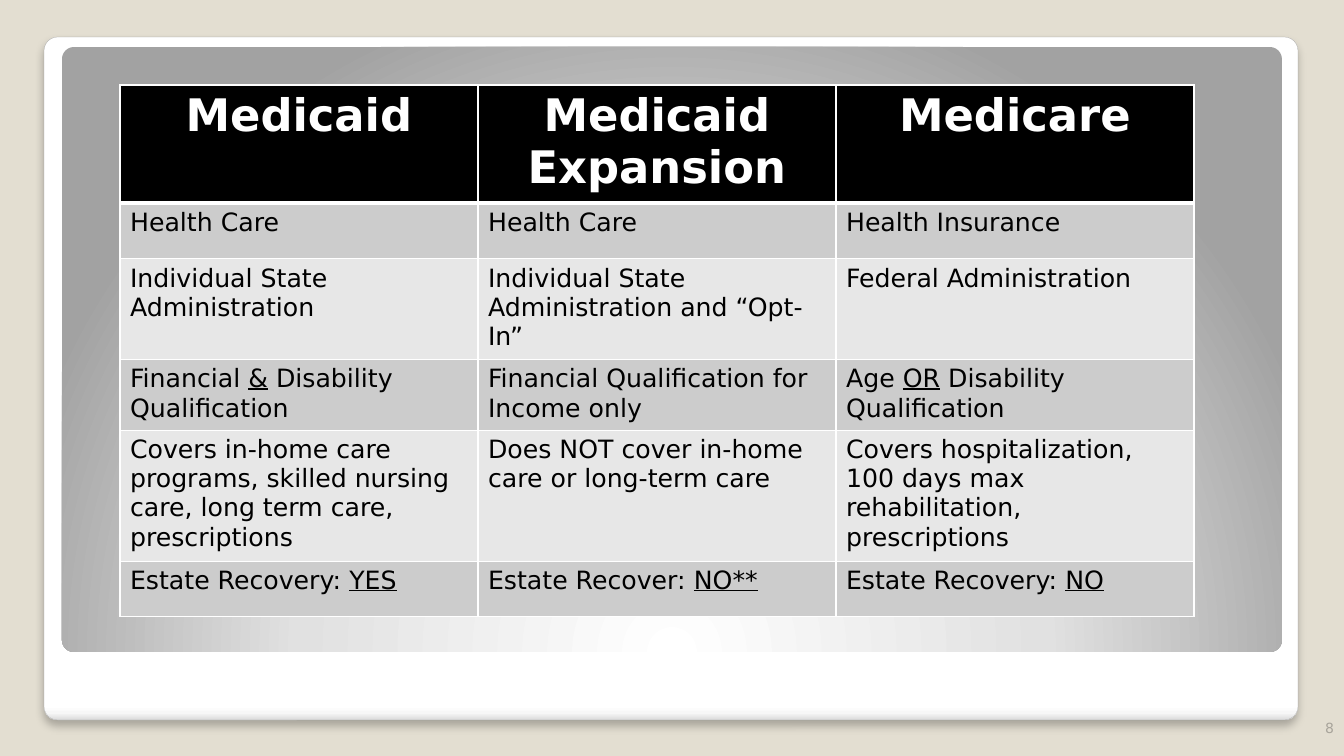
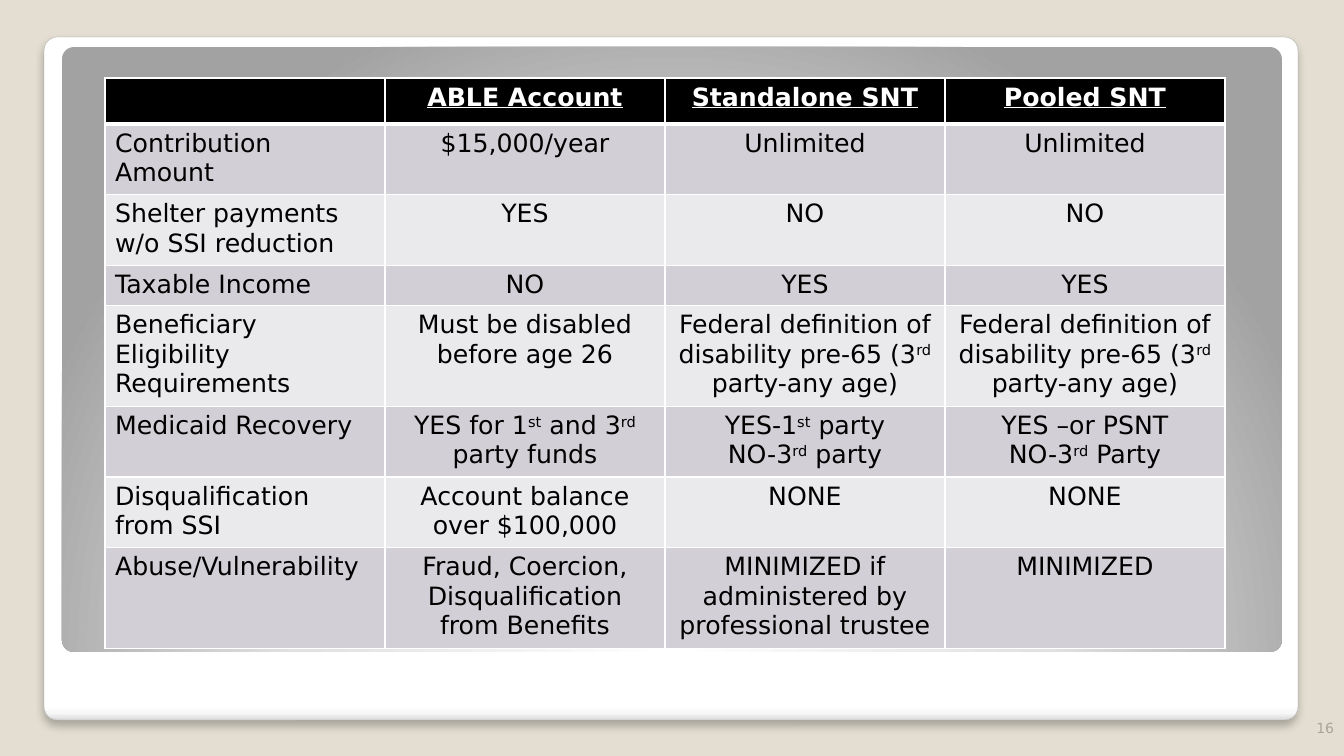
from pptx import Presentation
from pptx import util as u
from pptx.dml.color import RGBColor
from pptx.enum import shapes, text
from pptx.oxml import parse_xml
from pptx.oxml.ns import nsdecls, qn

# Shared look
FONT = "DejaVu Sans"
BLACK = RGBColor(0x00, 0x00, 0x00)
WHITE = RGBColor(0xFF, 0xFF, 0xFF)
SAND = RGBColor(0xE3, 0xDE, 0xD1)
CARD_EDGE = RGBColor(0xA4, 0xA4, 0xA4)
NUMBER_GREY = RGBColor(0xA8, 0xA4, 0x9B)
GREYS = RGBColor(0xCC, 0xCC, 0xCC), RGBColor(0xE7, 0xE7, 0xE7)
MAUVES = RGBColor(0xD2, 0xCF, 0xD6), RGBColor(0xEA, 0xE9, 0xEC)

PX_PER_INCH = 100.8
PAGE_SIZE = 1344, 756
CARD_BOX = 44, 37, 1254, 683
PANEL_BOX = 62, 47, 1220, 605
NUMBER_BOX = 1142, 701, 202, 40
CARD_STOPS = [(0, "FFFFFF"), (98, "FFFFFF"), (99, "F7F7F7"), (100, "DADADA")]
PANEL_STOPS = [(0, "FFFFFF"), (55, "E1E1E1"), (100, "A2A2A2")]
DOWNWARD = '<a:lin ang="5400000" scaled="0"/>'
FROM_BELOW = ('<a:path path="circle">'
              '<a:fillToRect l="50000" t="175000" r="50000" b="-75000"/></a:path>')

# Content: text between bars is emphasised (underlined or raised)
PROGRAMS = [
    ["Medicaid", "Medicaid Expansion", "Medicare"],
    ["Health Care", "Health Care", "Health Insurance"],
    ["Individual State Administration",
     "Individual State Administration and “Opt-In”",
     "Federal Administration"],
    ["Financial |&| Disability Qualification",
     "Financial Qualification for Income only",
     "Age |OR| Disability Qualification"],
    ["Covers in-home care programs, skilled nursing care, long term care, prescriptions",
     "Does NOT cover in-home care or long-term care",
     "Covers hospitalization, 100 days max rehabilitation, prescriptions"],
    ["Estate Recovery: |YES|", "Estate Recover: |NO**|", "Estate Recovery: |NO|"],
]
DISABILITY_RULE = "Federal definition of disability pre-65 (3|rd| party-any age)"
ACCOUNTS = [
    ["", "ABLE Account", "Standalone SNT", "Pooled SNT"],
    ["Contribution Amount", "$15,000/year", "Unlimited", "Unlimited"],
    ["Shelter payments w/o SSI reduction", "YES", "NO", "NO"],
    ["Taxable Income", "NO", "YES", "YES"],
    ["Beneficiary Eligibility Requirements", "Must be disabled before age 26",
     DISABILITY_RULE, DISABILITY_RULE],
    ["Medicaid Recovery", "YES for 1|st| and 3|rd| party funds",
     "YES-1|st| party\nNO-3|rd| party", "YES –or PSNT\nNO-3|rd| Party"],
    ["Disqualification from SSI", "Account balance over $100,000", "NONE", "NONE"],
    ["Abuse/Vulnerability", "Fraud, Coercion, Disqualification from Benefits",
     "MINIMIZED if administered by professional trustee", "MINIMIZED"],
]
PAGES = [
    dict(number=8, cells=PROGRAMS, corner=(120, 85), column=358,
         rows=[114, 56, 98, 68, 128, 55], bands=GREYS, emphasis=("u", "sng"),
         header_size=32, header_underline=False, centred=False),
    dict(number=16, cells=ACCOUNTS, corner=(105, 78), column=280,
         rows=[46, 69, 69, 39, 98, 69, 68, 98], bands=MAUVES,
         emphasis=("baseline", "30000"),
         header_size=18, header_underline=True, centred=True),
]


def px(*lengths):
    return [u.Inches(length / PX_PER_INCH) for length in lengths]


def style(para, size, color, align, bold=False, underline=False):
    para.alignment = align
    font = para.font
    font.name, font.size, font.bold = FONT, u.Pt(size), bold
    font.color.rgb = color
    font.underline = underline


def add_rounded(page, box, stops, direction):
    shape = page.shapes.add_shape(shapes.MSO_SHAPE.ROUNDED_RECTANGLE, *px(*box))
    shape.adjustments[0] = 0.02
    shape.shadow.inherit = False
    shape.line.fill.background()
    marks = "".join(f'<a:gs pos="{pos * 1000}"><a:srgbClr val="{color}"/></a:gs>'
                    for pos, color in stops)
    gradient = parse_xml(f'<a:gradFill {nsdecls("a")} rotWithShape="1">'
                         f'<a:gsLst>{marks}</a:gsLst>{direction}</a:gradFill>')
    shape._element.spPr.find(qn("a:prstGeom")).addnext(gradient)
    return shape


def add_frame(page, number):
    page.background.fill.solid()
    page.background.fill.fore_color.rgb = SAND
    # White card with a soft shadow, grey panel on top
    card = add_rounded(page, CARD_BOX, CARD_STOPS, DOWNWARD)
    card.line.color.rgb = CARD_EDGE
    card.line.width = u.Pt(0.16)
    card._element.spPr.find(qn("a:effectLst")).append(parse_xml(
        f'<a:outerShdw {nsdecls("a")} blurRad="{u.Pt(6)}" dist="{u.Pt(4)}" '
        'dir="5400000" rotWithShape="0"><a:srgbClr val="000000">'
        '<a:alpha val="25000"/></a:srgbClr></a:outerShdw>'))
    add_rounded(page, PANEL_BOX, PANEL_STOPS, FROM_BELOW)
    # Page number
    frame = page.shapes.add_textbox(*px(*NUMBER_BOX)).text_frame
    frame.word_wrap = True
    frame.vertical_anchor = text.MSO_ANCHOR.BOTTOM
    para = frame.paragraphs[0]
    para.text = str(number)
    style(para, 10, NUMBER_GREY, text.PP_ALIGN.RIGHT)


def set_borders(cell, top, bottom):
    widths = {"lnL": 1, "lnR": 1, "lnT": top, "lnB": bottom}
    for index, (side, width) in enumerate(widths.items()):
        cell._tc.get_or_add_tcPr().insert(index, parse_xml(
            f'<a:{side} {nsdecls("a")} w="{u.Pt(width)}"><a:solidFill>'
            f'<a:srgbClr val="{WHITE}"/></a:solidFill></a:{side}>'))


def fill_text(para, line, emphasis):
    for index, piece in enumerate(line.split("|")):
        if piece:
            span = para.add_run()
            span.text = piece
            if index % 2:
                span._r.get_or_add_rPr().set(*emphasis)


def add_comparison(page, cells, corner, column, rows, bands, emphasis,
                   header_size, header_underline, centred):
    columns = len(cells[0])
    table = page.shapes.add_table(
        len(rows), columns, *px(*corner, column * columns, sum(rows))).table
    for col in table.columns:
        col.width = px(column)[0]
    for r, (height, row) in enumerate(zip(rows, cells)):
        table.rows[r].height = px(height)[0]
        header = r == 0
        for c, content in enumerate(row):
            cell = table.cell(r, c)
            cell.fill.solid()
            cell.fill.fore_color.rgb = BLACK if header else bands[(r - 1) % 2]
            set_borders(cell, top=3 if r == 1 else 1, bottom=3 if header else 1)
            middle = header or (centred and c > 0)
            align = text.PP_ALIGN.CENTER if middle else text.PP_ALIGN.LEFT
            for n, line in enumerate(content.split("\n")):
                frame = cell.text_frame
                para = frame.add_paragraph() if n else frame.paragraphs[0]
                fill_text(para, line, emphasis)
                if header:
                    style(para, header_size, WHITE, align, True, header_underline)
                else:
                    style(para, 18, BLACK, align)


def main():
    deck = Presentation()
    deck.slide_width, deck.slide_height = px(*PAGE_SIZE)
    for details in PAGES:
        page = deck.slides.add_slide(deck.slide_layouts[6])
        add_frame(page, details["number"])
        add_comparison(page, **{k: v for k, v in details.items() if k != "number"})
    deck.save("out.pptx")


if __name__ == "__main__":
    main()
